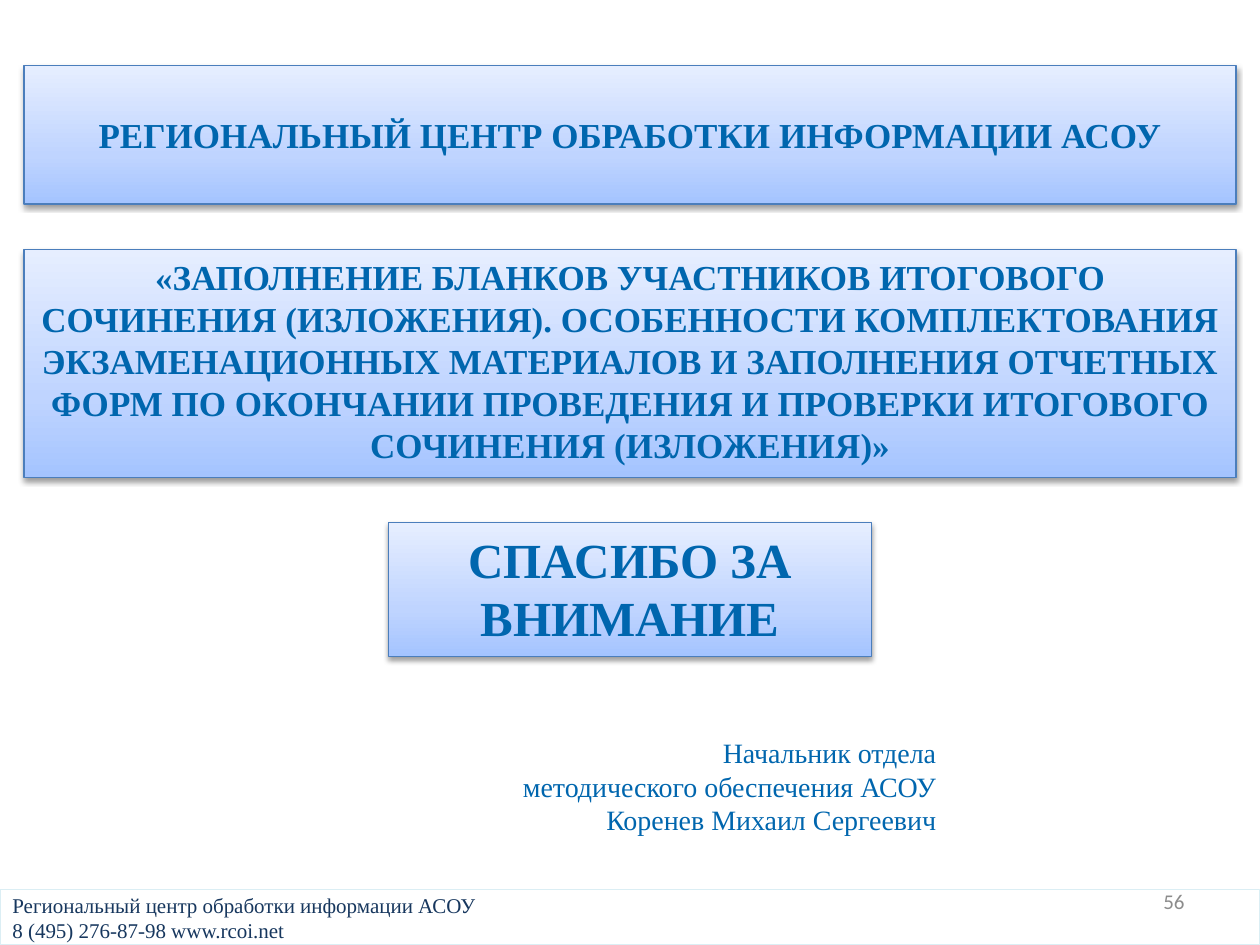
from copy import deepcopy

from lxml.etree import SubElement
from pptx import Presentation
from pptx.dml.color import RGBColor as RGB
from pptx.enum.shapes import MSO_SHAPE as SHAPE
from pptx.enum.text import MSO_ANCHOR as ANCHOR, PP_ALIGN as ALIGN
from pptx.oxml.ns import qn
from pptx.util import Inches, Pt

COLORS = {
    "text": "0066AE", "border": "4B7EBC", "shadow": "000000",
    "bottom": "A4C4FF", "middle": "BFD4FF", "top": "E6EEFF",
    "footer": "17375E", "footer_fill": "FFFFFF", "footer_line": "DBEEF4",
    "number": "8C8C8C",
}
SERIF = "Times New Roman"


def rgb(name):
    return RGB.from_string(COLORS[name])


def write(shape, lines, align, anchor, color, **font_format):
    frame = shape.text_frame
    frame.word_wrap = True
    frame.vertical_anchor = anchor
    frame.text = "\n".join(lines)
    for paragraph in frame.paragraphs:
        paragraph.alignment = align
        paragraph.font.color.rgb = rgb(color)
        for attribute, value in font_format.items():
            setattr(paragraph.font, attribute, value)


deck = Presentation()
deck.slide_width, deck.slide_height = Inches(10), Inches(7.5)
slide = deck.slides.add_slide(deck.slide_layouts[6])

# Footer strip
footer = slide.shapes.add_shape(
    SHAPE.RECTANGLE, Inches(0), Inches(7.06), Inches(10), Inches(0.44))
footer.shadow.inherit = False
footer.fill.solid()
footer.fill.fore_color.rgb = rgb("footer_fill")
footer_color = next(footer.fill._xPr.iter(qn("a:srgbClr")))
SubElement(footer_color, qn("a:alpha"), val="54000")
footer.line.color.rgb = rgb("footer_line")
footer.line.width = Pt(0.5)
write(footer,
      ["Региональный центр обработки информации АСОУ",
       "8 (495) 276-87-98 www.rcoi.net"],
      ALIGN.LEFT, ANCHOR.MIDDLE, "footer", name=SERIF, size=Pt(12))

# Gradient panels, centred on the slide: top, width, height, size, anchor, text
panels = [
    (0.52, 9.62, 1.1, 20, ANCHOR.MIDDLE,
     "РЕГИОНАЛЬНЫЙ ЦЕНТР ОБРАБОТКИ ИНФОРМАЦИИ АСОУ"),
    (1.98, 9.62, 1.81, 20, ANCHOR.TOP,
     "«ЗАПОЛНЕНИЕ БЛАНКОВ УЧАСТНИКОВ ИТОГОВОГО СОЧИНЕНИЯ (ИЗЛОЖЕНИЯ). "
     "ОСОБЕННОСТИ КОМПЛЕКТОВАНИЯ ЭКЗАМЕНАЦИОННЫХ МАТЕРИАЛОВ И ЗАПОЛНЕНИЯ "
     "ОТЧЕТНЫХ ФОРМ ПО ОКОНЧАНИИ ПРОВЕДЕНИЯ И ПРОВЕРКИ ИТОГОВОГО "
     "СОЧИНЕНИЯ (ИЗЛОЖЕНИЯ)»"),
    (4.15, 3.83, 1.06, 28, ANCHOR.TOP, "СПАСИБО ЗА ВНИМАНИЕ"),
]
for top, width, height, size, anchor, text in panels:
    panel = slide.shapes.add_shape(
        SHAPE.RECTANGLE, Inches((10 - width) / 2), Inches(top),
        Inches(width), Inches(height))
    panel.line.color.rgb = rgb("border")
    panel.line.width = Pt(0.75)

    # Three-stop gradient rising from the bottom edge
    panel.fill.gradient()
    panel.fill.gradient_angle = 90
    stop_list = next(panel.fill._xPr.iter(qn("a:gsLst")))
    stop_list.append(deepcopy(stop_list[0]))
    stops = [("bottom", 0), ("middle", 0.35), ("top", 1)]
    for stop, (name, position) in zip(panel.fill.gradient_stops, stops):
        stop.color.rgb = rgb(name)
        stop.position = position

    # Soft shadow straight below
    panel.shadow.inherit = False
    effects = next(panel.fill._xPr.iter(qn("a:effectLst")))
    shadow = SubElement(effects, qn("a:outerShdw"), blurRad=str(Pt(3.1)),
                        dist=str(Pt(1.6)), dir="5400000", rotWithShape="0")
    shade = SubElement(shadow, qn("a:srgbClr"), val=COLORS["shadow"])
    SubElement(shade, qn("a:alpha"), val="38000")

    write(panel, [text], ALIGN.CENTER, anchor, "text",
          name=SERIF, size=Pt(size), bold=True)

# Speaker
speaker = slide.shapes.add_textbox(
    Inches(3.98), Inches(5.79), Inches(3.55), Inches(0.91))
write(speaker,
      ["Начальник отдела", "методического обеспечения АСОУ",
       "Коренев Михаил Сергеевич"],
      ALIGN.RIGHT, ANCHOR.TOP, "text", name=SERIF, size=Pt(16))

# Slide number
number = slide.shapes.add_textbox(
    Inches(7.17), Inches(6.95), Inches(2.33), Inches(0.4))
write(number, ["56"], ALIGN.RIGHT, ANCHOR.MIDDLE, "number",
      name="Calibri", size=Pt(12))

deck.save("out.pptx")
